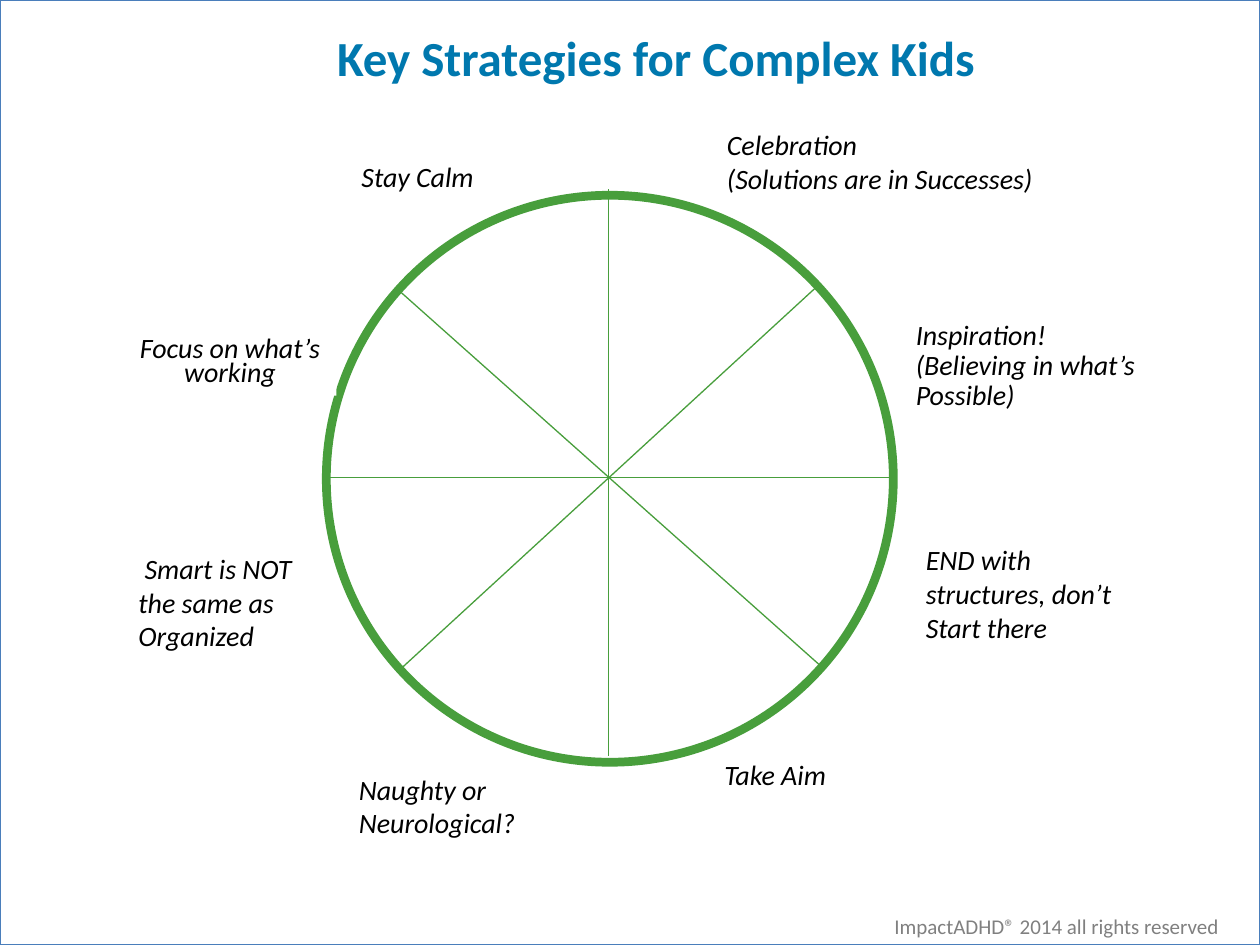
from dataclasses import dataclass

from lxml import etree
from pptx import Presentation
from pptx.dml.color import RGBColor
from pptx.enum.shapes import MSO_CONNECTOR, MSO_SHAPE
from pptx.enum.text import MSO_AUTO_SIZE, PP_ALIGN
from pptx.oxml.ns import qn
from pptx.util import Inches, Pt

STRAIGHT = MSO_CONNECTOR.STRAIGHT
RECTANGLE, OVAL = MSO_SHAPE.RECTANGLE, MSO_SHAPE.OVAL
GROW = MSO_AUTO_SIZE.SHAPE_TO_FIT_TEXT
LEFT, CENTER = PP_ALIGN.LEFT, PP_ALIGN.CENTER

COLORS = {
    "white": "FFFFFF",
    "black": "000000",
    "frame": "4A7EBB",
    "green": "489E3C",
    "title": "0078AE",
    "footer": "808080",
}


def color(name):
    return RGBColor.from_string(COLORS[name])


@dataclass
class SlideBuilder:
    """Draws styled elements on the current slide."""

    slide: object
    font: str = "Calibri"

    def outline(self, kind, box, line, width):
        shape = self.slide.shapes.add_shape(kind, *map(Inches, box))
        shape.shadow.inherit = False
        shape.fill.solid()
        shape.fill.fore_color.rgb = color("white")
        shape.line.color.rgb = color(line)
        shape.line.width = Pt(width)

    def spoke(self, start, end):
        connector = self.slide.shapes.add_connector(STRAIGHT, *map(Inches, start + end))
        connector.line.color.rgb = color("green")
        connector.line.width = Pt(0.75)
        etree.SubElement(connector._element.spPr, qn("a:effectLst"))

    def text(self, words, box, size=16, ink="black", bold=False, italic=False,
             align=LEFT, spacing=1.0, after=0, fill=None, wrap=True):
        shape = self.slide.shapes.add_textbox(*map(Inches, box))
        if fill:
            shape.fill.solid()
            shape.fill.fore_color.rgb = color(fill)
        frame = shape.text_frame
        frame.word_wrap = wrap
        frame.auto_size = GROW
        frame.text = words
        for paragraph in frame.paragraphs:
            paragraph.alignment = align
            paragraph.line_spacing = spacing
            paragraph.space_after = Pt(after)
            for run in paragraph.runs:
                run.font.name = self.font
                run.font.size = Pt(size)
                run.font.bold = bold
                run.font.italic = italic
                run.font.color.rgb = color(ink)

    def label(self, words, box, **style):
        self.text(words, box, italic=True, after=10, **style)


def main():
    presentation = Presentation()
    presentation.slide_width, presentation.slide_height = Inches(10), Inches(7.5)
    builder = SlideBuilder(presentation.slides.add_slide(presentation.slide_layouts[6]))

    builder.outline(RECTANGLE, (0, 0, 10, 7.5), "frame", 0.75)
    builder.text("ImpactADHD® 2014 all rights reserved", (7, 7.2, 3, 0.3),
                 size=12, ink="footer")

    builder.outline(OVAL, (2.59, 1.55, 4.5, 4.5), "green", 5)
    spokes = [
        ((4.83, 1.5), (4.83, 6)),
        ((2.62, 3.79), (7.12, 3.79)),
        ((3.19, 5.3), (6.51, 2.25)),
        ((3.16, 2.3), (6.53, 5.3)),
    ]
    for start, end in spokes:
        builder.spoke(start, end)

    filled = {"fill": "white"}
    labels = [
        ("Naughty or Neurological?", (2.75, 6.08, 1.81, 0.64), filled),
        ("Focus on what’s working", (0.98, 2.65, 1.69, 0.49),
         {"fill": "white", "align": CENTER, "spacing": 0.7}),
        ("Stay Calm", (2.77, 1.33, 1.31, 0.26), {"fill": "white", "spacing": 0.5}),
        ("END with structures, don’t Start there", (7.25, 4.26, 1.83, 0.91), filled),
        (" Smart is NOT the same as Organized", (1, 4.33, 1.5, 0.91), filled),
        ("Take Aim", (5.65, 6.08, 1.1, 0.26), {"spacing": 0.5, "wrap": False}),
        ("Celebration\n(Solutions are in Successes)", (5.67, 1.08, 2.72, 0.53),
         {"spacing": 0.5, "wrap": False}),
        ("Inspiration! (Believing in what’s Possible)", (7.17, 2.5, 2.1, 0.83),
         {"spacing": 0.9}),
    ]
    for words, box, style in labels:
        builder.label(words, box, **style)

    builder.text("Key Strategies for Complex Kids", (1.08, 0.17, 8.25, 0.57),
                 size=28, ink="title", bold=True, align=CENTER)
    presentation.save("out.pptx")


if __name__ == "__main__":
    main()
